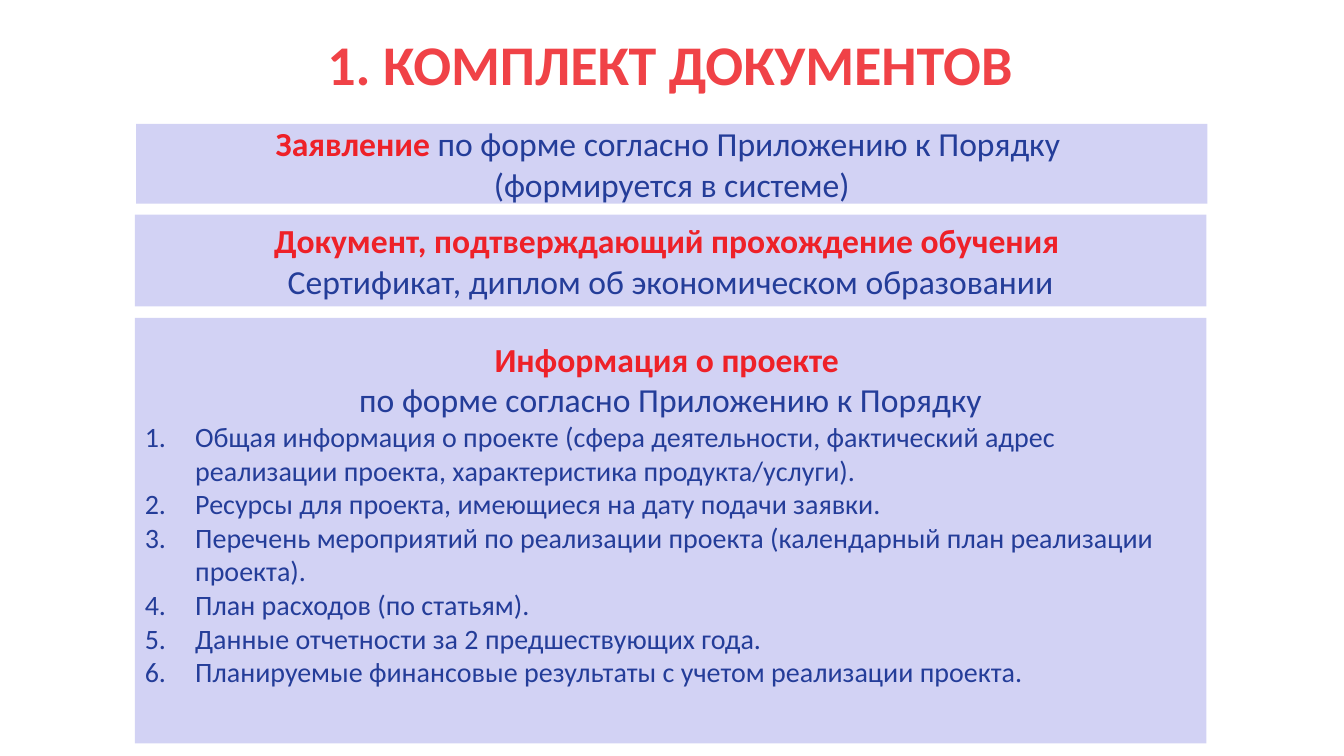
"""Build the slide that lists the set of application documents."""
from dataclasses import dataclass

from lxml.etree import SubElement
from pptx import Presentation
from pptx.dml.color import RGBColor
from pptx.enum.shapes import MSO_SHAPE
from pptx.enum.text import MSO_ANCHOR, MSO_AUTO_SIZE, PP_ALIGN
from pptx.oxml.ns import qn
from pptx.slide import Slide
from pptx.util import Cm, Pt

COLORS = {"title": "F04247", "panel": "D2D2F4", "heading": "EE2128", "body": "243D99"}
FONT = "Calibri"
PANEL_WIDTH = 27
NUMBER_INDENT = 1.27


@dataclass(frozen=True)
class Line:
    """A paragraph made of an optional red heading and blue body text."""
    heading: str = ""
    body: str = ""
    numbered: bool = False


@dataclass(frozen=True)
class Panel:
    """A document block, with its place in centimetres."""
    left: float
    top: float
    height: float
    lines: tuple[Line, ...]
    bottom_inset: float = 0.13


PROJECT_SECTIONS = (
    "Общая информация о проекте (сфера деятельности, фактический адрес "
    "реализации проекта, характеристика продукта/услуги).",
    "Ресурсы для проекта, имеющиеся на дату подачи заявки.",
    "Перечень мероприятий по реализации проекта (календарный план реализации проекта).",
    "План расходов (по статьям).",
    "Данные отчетности за 2 предшествующих года.",
    "Планируемые финансовые результаты с учетом реализации проекта.",
)

PANELS = (
    Panel(3.43, 3.12, 2.01, (
        Line("Заявление ", "по форме согласно Приложению к Порядку "),
        Line(body="(формируется в системе)"),
    )),
    Panel(3.4, 5.41, 2.31, (
        Line("Документ, подтверждающий прохождение обучения "),
        Line(body="Сертификат, диплом об экономическом образовании"),
    )),
    Panel(3.4, 8.01, 10.72, (
        Line("Информация о проекте "),
        Line(body="по форме согласно Приложению к Порядку"),
        *(Line(body=section, numbered=True) for section in PROJECT_SECTIONS),
    ), bottom_inset=0.98),
)


def style_font(font, size: float, color: str, bold: bool) -> None:
    """Set the typeface, size, colour and weight of a font."""
    font.name = FONT
    font.size = Pt(size)
    font.bold = bold
    font.color.rgb = RGBColor.from_string(COLORS[color])


def number_paragraph(paragraph) -> None:
    """Give a paragraph a hanging indent and an automatic number."""
    properties = paragraph._p.get_or_add_pPr()
    properties.set("marL", str(Cm(NUMBER_INDENT)))
    properties.set("indent", str(-Cm(NUMBER_INDENT)))
    SubElement(properties, qn("a:buFont"), typeface="+mj-lt")
    SubElement(properties, qn("a:buAutoNum"), type="arabicPeriod")


def write_line(paragraph, line: Line) -> None:
    """Fill a paragraph with a line's heading and body."""
    paragraph.alignment = PP_ALIGN.LEFT if line.numbered else PP_ALIGN.CENTER
    if line.numbered:
        number_paragraph(paragraph)
    parts = [(text, color) for text, color in
             ((line.heading, "heading"), (line.body, "body")) if text]
    for text, color in parts:
        run = paragraph.add_run()
        run.text = text
        font = run.font if len(parts) > 1 else paragraph.font
        style_font(font, 20 if line.numbered else 24, color, color == "heading")


def draw_panel(slide: Slide, panel: Panel) -> None:
    """Draw a document block with its text."""
    block = slide.shapes.add_shape(
        MSO_SHAPE.PENTAGON, Cm(panel.left), Cm(panel.top), Cm(PANEL_WIDTH), Cm(panel.height))
    block.adjustments[0] = 0
    block.shadow.inherit = False
    block.fill.solid()
    block.fill.fore_color.rgb = RGBColor.from_string(COLORS["panel"])
    block.line.fill.background()
    frame = block.text_frame
    frame.word_wrap = True
    frame.vertical_anchor = MSO_ANCHOR.MIDDLE
    frame.margin_bottom = Cm(panel.bottom_inset)
    for index, line in enumerate(panel.lines):
        write_line(frame.add_paragraph() if index else frame.paragraphs[0], line)


def write_title(slide: Slide) -> None:
    """Place and format the slide title."""
    title = slide.shapes.title
    title.left, title.top = Cm(-0.05), Cm(-0.15)
    title.width, title.height = Cm(33.87), Cm(3.63)
    frame = title.text_frame
    frame.text = "1. КОМПЛЕКТ ДОКУМЕНТОВ"
    frame.word_wrap = True
    frame.auto_size = MSO_AUTO_SIZE.NONE
    frame.vertical_anchor = MSO_ANCHOR.MIDDLE
    paragraph = frame.paragraphs[0]
    paragraph.alignment = PP_ALIGN.CENTER
    paragraph.line_spacing = 0.96
    style_font(paragraph.font, 40, "title", True)


def main() -> None:
    """Create the presentation and save it."""
    presentation = Presentation()
    presentation.slide_width, presentation.slide_height = Cm(33.87), Cm(19.05)
    slide = presentation.slides.add_slide(presentation.slide_layouts[5])
    write_title(slide)
    for panel in PANELS:
        draw_panel(slide, panel)
    presentation.save("out.pptx")


if __name__ == "__main__":
    main()
